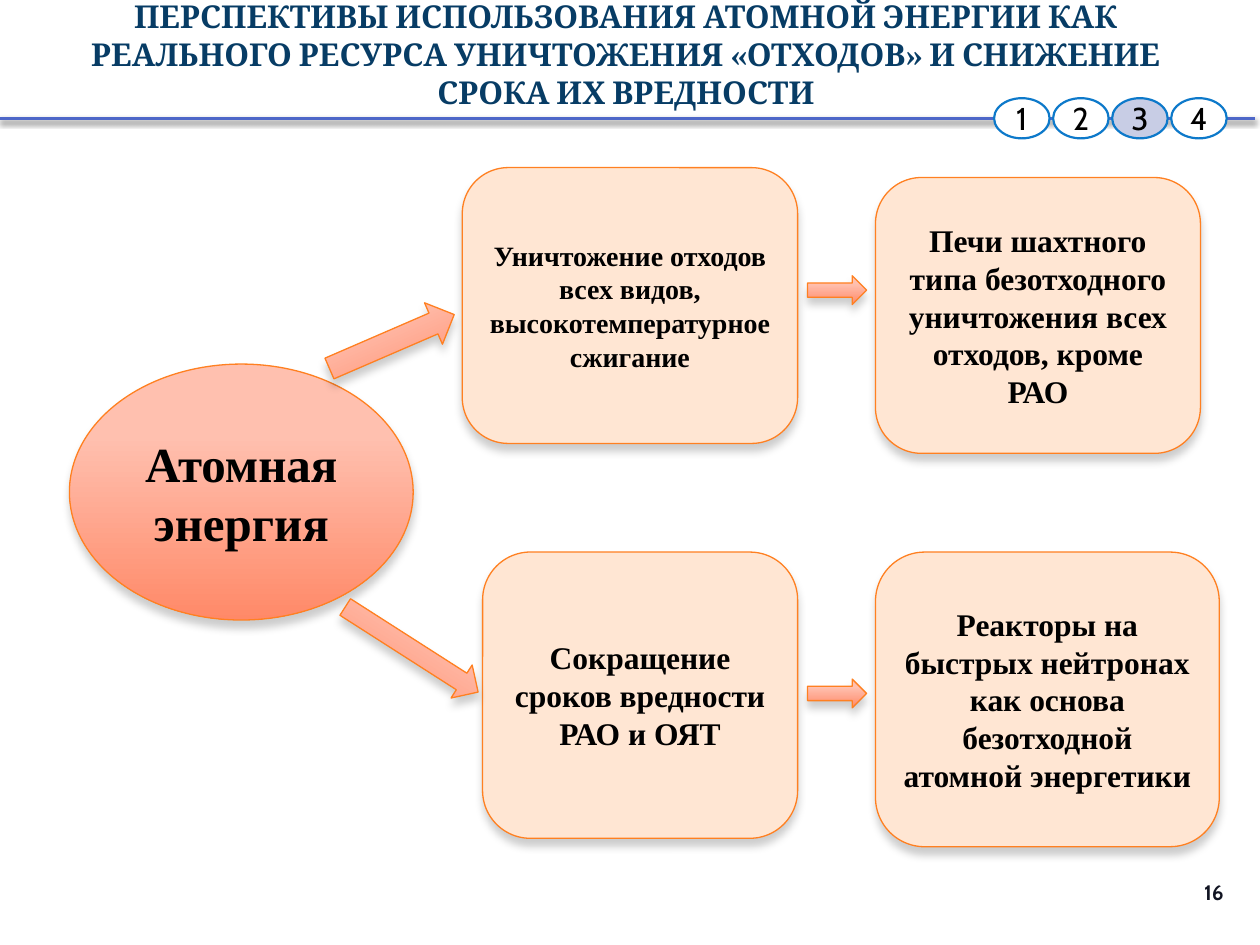
from dataclasses import dataclass

from lxml import etree
from pptx import Presentation
from pptx.dml.color import RGBColor
from pptx.enum.shapes import MSO_CONNECTOR, MSO_SHAPE
from pptx.enum.text import MSO_ANCHOR, MSO_AUTO_SIZE, PP_ALIGN
from pptx.oxml.ns import qn
from pptx.util import Cm, Pt

OVAL, ROUND, ARROW = MSO_SHAPE.OVAL, MSO_SHAPE.ROUNDED_RECTANGLE, MSO_SHAPE.RIGHT_ARROW
CENTER, RIGHT = PP_ALIGN.CENTER, PP_ALIGN.RIGHT
MIDDLE, NO_FIT = MSO_ANCHOR.MIDDLE, MSO_AUTO_SIZE.NONE
STRAIGHT = MSO_CONNECTOR.STRAIGHT

SERIF, SANS, HEAD = "Times New Roman", "Cabin", "Cambria"
ORANGE, PEACH, BLUE = "FF8021", "FFE6D3", "0D79CA"
GRADIENT = ((0.28, "FFC0AF"), (1, "FF8968"))


@dataclass
class Shadow:
    """Downward shadow: opacity in percent, blur and distance in points."""
    opacity: int
    blur: float
    dist: float


@dataclass
class Node:
    """Shape with optional text; lengths in centimetres, no fill means gradient."""
    kind: int
    x: float
    y: float
    w: float
    h: float
    lines: tuple = ()
    size: int = 18
    fill: str = ""
    rotation: float = 0


SOFT, STRONG = Shadow(20, 5, 4), Shadow(45, 3.1, 1.8)

NODES = (
    Node(OVAL, 1.4, 7.34, 6.93, 5.16, ("Атомная энергия",), 28),
    Node(ROUND, 9.32, 3.38, 6.76, 5.56,
         ("Уничтожение отходов всех видов,", "высокотемпературное сжигание"), 16, PEACH),
    Node(ROUND, 17.65, 3.58, 6.55, 5.56,
         ("Печи шахтного типа безотходного уничтожения всех отходов, кроме РАО",), 18, PEACH),
    Node(ROUND, 9.73, 11.13, 6.35, 5.77,
         ("Сокращение сроков вредности РАО и ОЯТ",), 18, PEACH),
    Node(ROUND, 17.65, 11.13, 6.93, 5.94,
         ("Реакторы на быстрых нейтронах как основа безотходной атомной энергетики",), 18, PEACH),
    Node(ARROW, 6.53, 6.43, 2.74, 0.91, rotation=336.6),
    Node(ARROW, 6.71, 12.7, 3.18, 0.79, rotation=32.6),
    Node(ARROW, 16.28, 5.56, 1.19, 0.58),
    Node(ARROW, 16.28, 13.69, 1.19, 0.58),
)


def rgb(value: str) -> RGBColor:
    """Turn a hex string into a colour."""
    return RGBColor.from_string(value)


def set_line(s, color: str, width: float) -> None:
    """Set the colour and width of an outline."""
    s.line.color.rgb = rgb(color)
    s.line.width = Pt(width)


def set_shadow(s, shadow: Shadow | None) -> None:
    """Replace the theme effects with the given shadow or with none."""
    effects = etree.SubElement(s._element.spPr, qn("a:effectLst"))
    if shadow:
        outer = etree.SubElement(effects, qn("a:outerShdw"), blurRad=str(Pt(shadow.blur)),
                                 dist=str(Pt(shadow.dist)), dir="5400000", rotWithShape="0")
        color = etree.SubElement(outer, qn("a:srgbClr"), val="000000")
        etree.SubElement(color, qn("a:alpha"), val=str(shadow.opacity * 1000))


def set_text(s, lines: tuple, font: str, size: int, color: str = "000000",
             bold: bool = True, align: int = CENTER, **frame) -> None:
    """Write one paragraph per line in a single format."""
    tf = s.text_frame
    frame = {"word_wrap": True, "auto_size": NO_FIT, "vertical_anchor": MIDDLE} | frame
    for name, value in frame.items():
        setattr(tf, name, value)
    for i, line in enumerate(lines):
        p = tf.add_paragraph() if i else tf.paragraphs[0]
        p.alignment = align
        r = p.add_run()
        r.text = line
        for name, value in {"name": font, "size": Pt(size), "bold": bold}.items():
            setattr(r.font, name, value)
        r.font.color.rgb = rgb(color)


def add_node(slide, node: Node) -> None:
    """Draw a diagram block or arrow."""
    s = slide.shapes.add_shape(node.kind, Cm(node.x), Cm(node.y), Cm(node.w), Cm(node.h))
    s.rotation = node.rotation
    if node.fill:
        s.fill.solid()
        s.fill.fore_color.rgb = rgb(node.fill)
    else:
        s.fill.gradient()
        s.fill.gradient_angle = 270
        for stop, (position, color) in zip(s.fill.gradient_stops, GRADIENT):
            stop.position = position
            stop.color.rgb = rgb(color)
    set_line(s, ORANGE, 0.75)
    set_shadow(s, SOFT)
    if node.lines:
        set_text(s, node.lines, SERIF, node.size)


def add_steps(slide, count: int, current: int) -> None:
    """Draw the row of numbered section markers."""
    for i in range(count):
        s = slide.shapes.add_shape(OVAL, Cm(20.04 + 1.19 * i), Cm(1.98), Cm(1.12), Cm(0.81))
        s.fill.solid()
        s.fill.fore_color.rgb = rgb("C8CDE5" if i + 1 == current else "FFFFFF")
        set_line(s, BLUE, 1.25)
        set_shadow(s, None)
        set_text(s, (str(i + 1),), SANS, 18, bold=False,
                 margin_left=0, margin_right=0, margin_top=0, margin_bottom=0)


def main() -> None:
    """Build and save the slide."""
    prs = Presentation()
    prs.slide_width, prs.slide_height = Cm(25.4), Cm(19.05)
    slide = prs.slides.add_slide(prs.slide_layouts[5])

    title = slide.shapes.title
    place = {"left": 1.19, "top": 0, "width": 22.86, "height": 2.18}
    for name, value in place.items():
        setattr(title, name, Cm(value))
    set_text(title, ("ПЕРСПЕКТИВЫ ИСПОЛЬЗОВАНИЯ АТОМНОЙ ЭНЕРГИИ КАК РЕАЛЬНОГО РЕСУРСА "
                     "УНИЧТОЖЕНИЯ «ОТХОДОВ» И СНИЖЕНИЕ СРОКА ИХ ВРЕДНОСТИ",), HEAD, 18, "073C65")

    for node in NODES:
        add_node(slide, node)

    number = slide.shapes.add_textbox(Cm(23.22), Cm(17.48), Cm(1.7), Cm(0.99))
    set_text(number, ("16",), SANS, 12, "111422", align=RIGHT)

    rule = slide.shapes.add_connector(STRAIGHT, Cm(0), Cm(2.39), Cm(25.3), Cm(2.39))
    set_line(rule, "4E67C8", 2)
    set_shadow(rule, STRONG)
    add_steps(slide, 4, 3)

    prs.save("out.pptx")


if __name__ == "__main__":
    main()
